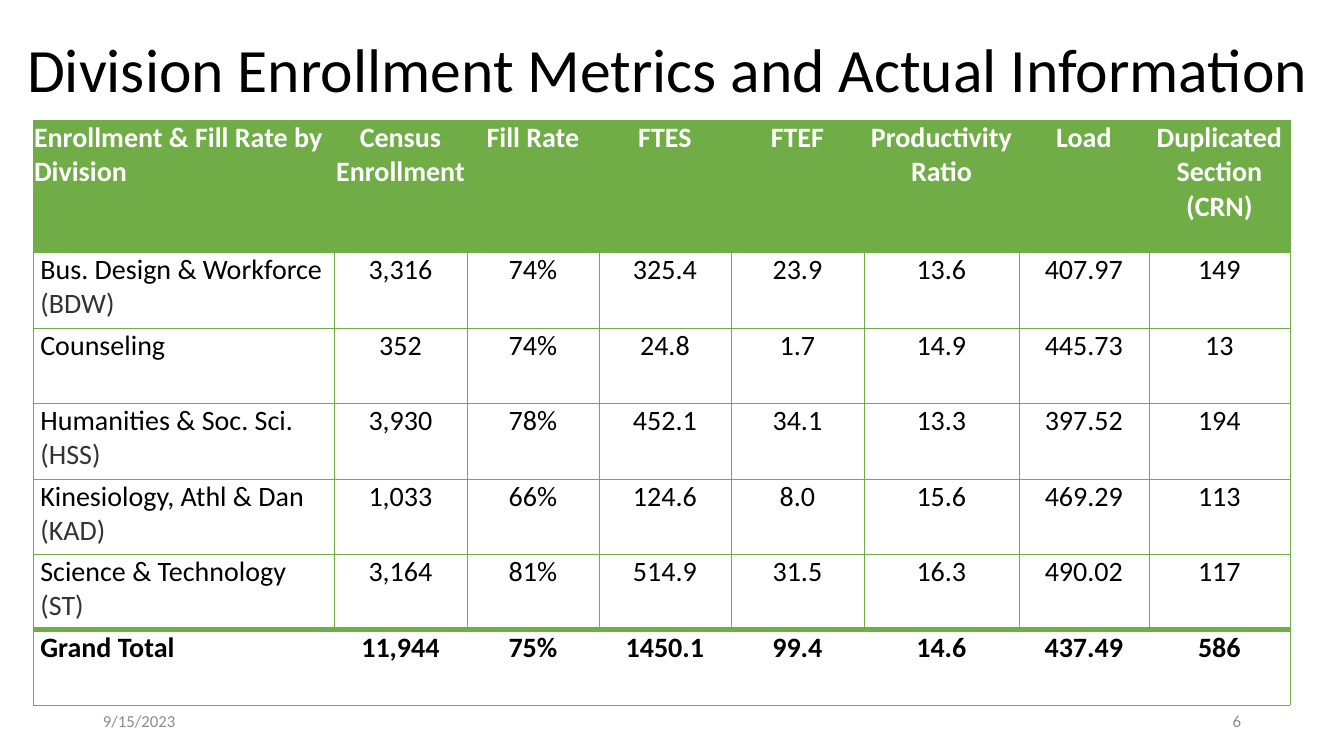
from dataclasses import dataclass

from lxml import etree
from pptx import Presentation
from pptx.dml.color import RGBColor
from pptx.enum.text import MSO_ANCHOR, PP_ALIGN
from pptx.oxml.ns import qn
from pptx.util import Pt

LEFT, CENTER, RIGHT = PP_ALIGN.LEFT, PP_ALIGN.CENTER, PP_ALIGN.RIGHT
MIDDLE = MSO_ANCHOR.MIDDLE
TITLE_ONLY = 5
SLIDE_WIDTH, SLIDE_HEIGHT = 1344, 756
EMU_PER_PX = 12192000 / SLIDE_WIDTH

HEADERS = ["Enrollment & Fill Rate by Division", "Census Enrollment", "Fill Rate", "FTES",
           "FTEF", "Productivity Ratio", "Load", "Duplicated Section (CRN)"]
DIVISIONS = [
    [" Bus. Design & Workforce\n (BDW)", "3,316", "74%", "325.4", "23.9", "13.6", "407.97", "149"],
    [" Counseling", "352", "74%", "24.8", "1.7", "14.9", "445.73", "13"],
    [" Humanities & Soc. Sci.\n (HSS)", "3,930", "78%", "452.1", "34.1", "13.3", "397.52", "194"],
    [" Kinesiology, Athl & Dan\n (KAD)", "1,033", "66%", "124.6", "8.0", "15.6", "469.29", "113"],
    [" Science & Technology\n (ST)", "3,164", "81%", "514.9", "31.5", "16.3", "490.02", "117"],
]
GRAND_TOTAL = [" Grand Total", "11,944", "75%", "1450.1", "99.4", "14.6", "437.49", "586"]
COLUMN_WIDTHS = [301, 133, 132, 132, 133, 155, 130, 141]
ROW_HEIGHTS = [132] + [76, 75] * 3


@dataclass(frozen=True)
class Theme:
    font: str = "Calibri"
    text: str = "000000"
    abbreviation: str = "333333"
    header_text: str = "FFFFFF"
    accent: str = "70AD47"
    footer: str = "8C8C8C"
    title_size: int = 44
    table_size: int = 20
    footer_size: int = 12
    thin_line: float = 0.5
    total_line: float = 4


def px(length):
    return round(length * EMU_PER_PX)


def apply(target, values):
    for name, value in values.items():
        setattr(target, name, value)


class SlideBuilder:
    def __init__(self, presentation, theme):
        self.theme = theme
        self.slide = presentation.slides.add_slide(presentation.slide_layouts[TITLE_ONLY])

    def place(self, shape, left, top, width, height):
        apply(shape, {"left": px(left), "top": px(top), "width": px(width), "height": px(height)})

    def fill_text(self, frame, lines, size, alignment=LEFT, bold=False, spacing=1.0):
        """Fill a text frame with one paragraph per (text, color) pair."""
        frame.word_wrap = True
        for index, (text, color) in enumerate(lines):
            paragraph = frame.add_paragraph() if index else frame.paragraphs[0]
            apply(paragraph, {"alignment": alignment, "line_spacing": spacing})
            run = paragraph.add_run()
            run.text = text
            apply(run.font, {"name": self.theme.font, "size": Pt(size), "bold": bold})
            run.font.color.rgb = RGBColor.from_string(color)

    def title(self, text, *box):
        shape = self.slide.shapes.title
        self.place(shape, *box)
        shape.text_frame.vertical_anchor = MIDDLE
        self.fill_text(shape.text_frame, [(text, self.theme.text)], self.theme.title_size,
                       spacing=0.9)

    def footer(self, text, alignment, *box):
        shape = self.slide.shapes.add_textbox(*map(px, box))
        shape.text_frame.vertical_anchor = MIDDLE
        self.fill_text(shape.text_frame, [(text, self.theme.footer)], self.theme.footer_size,
                       alignment)

    def borders(self, cell, widths):
        """Draw the cell edges; a width of zero hides an edge."""
        properties = cell._tc.get_or_add_tcPr()
        for position, (edge, width) in enumerate(widths.items()):
            line = etree.Element(qn(f"a:{edge}"), w=str(Pt(width)))
            if width:
                fill = etree.SubElement(line, qn("a:solidFill"))
                etree.SubElement(fill, qn("a:srgbClr"), val=self.theme.accent)
            else:
                etree.SubElement(line, qn("a:noFill"))
            properties.insert(position, line)

    def table(self, rows, left, top):
        theme = self.theme
        table = self.slide.shapes.add_table(
            len(rows), len(COLUMN_WIDTHS), px(left), px(top),
            px(sum(COLUMN_WIDTHS)), px(sum(ROW_HEIGHTS))).table
        apply(table, {"first_row": False, "horz_banding": False})
        for column, width in zip(table.columns, COLUMN_WIDTHS):
            column.width = px(width)
        for row, height in zip(table.rows, ROW_HEIGHTS):
            row.height = px(height)

        last_row, last_column = len(rows) - 1, len(COLUMN_WIDTHS) - 1
        for row_index, values in enumerate(rows):
            is_header, is_total = row_index == 0, row_index == last_row
            for column_index, value in enumerate(values):
                cell = table.cell(row_index, column_index)
                apply(cell, {"margin_left": px(1), "margin_right": px(1),
                             "margin_top": px(1), "margin_bottom": 0})
                if is_header:
                    cell.fill.solid()
                    cell.fill.fore_color.rgb = RGBColor.from_string(theme.accent)
                else:
                    cell.fill.background()
                colors = [theme.header_text if is_header else theme.text, theme.abbreviation]
                self.fill_text(cell.text_frame, list(zip(value.split("\n"), colors)),
                               theme.table_size, CENTER if column_index else LEFT,
                               is_header or is_total)
                inner = 0 if is_total else theme.thin_line
                self.borders(cell, {
                    "lnL": inner if column_index else theme.thin_line,
                    "lnR": inner if column_index < last_column else theme.thin_line,
                    "lnT": theme.total_line if is_total else theme.thin_line,
                    "lnB": theme.total_line if row_index == last_row - 1 else theme.thin_line,
                })


def main():
    presentation = Presentation()
    apply(presentation, {"slide_width": px(SLIDE_WIDTH), "slide_height": px(SLIDE_HEIGHT)})
    builder = SlideBuilder(presentation, Theme())
    builder.title("Division Enrollment Metrics and Actual Information", 17, 0, 1327, 146)
    builder.table([HEADERS, *DIVISIONS, GRAND_TOTAL], 33, 120)
    builder.footer("9/15/2023", LEFT, 93, 701, 302, 40)
    builder.footer("6", RIGHT, 949, 701, 302, 40)
    presentation.save("out.pptx")


if __name__ == "__main__":
    main()
